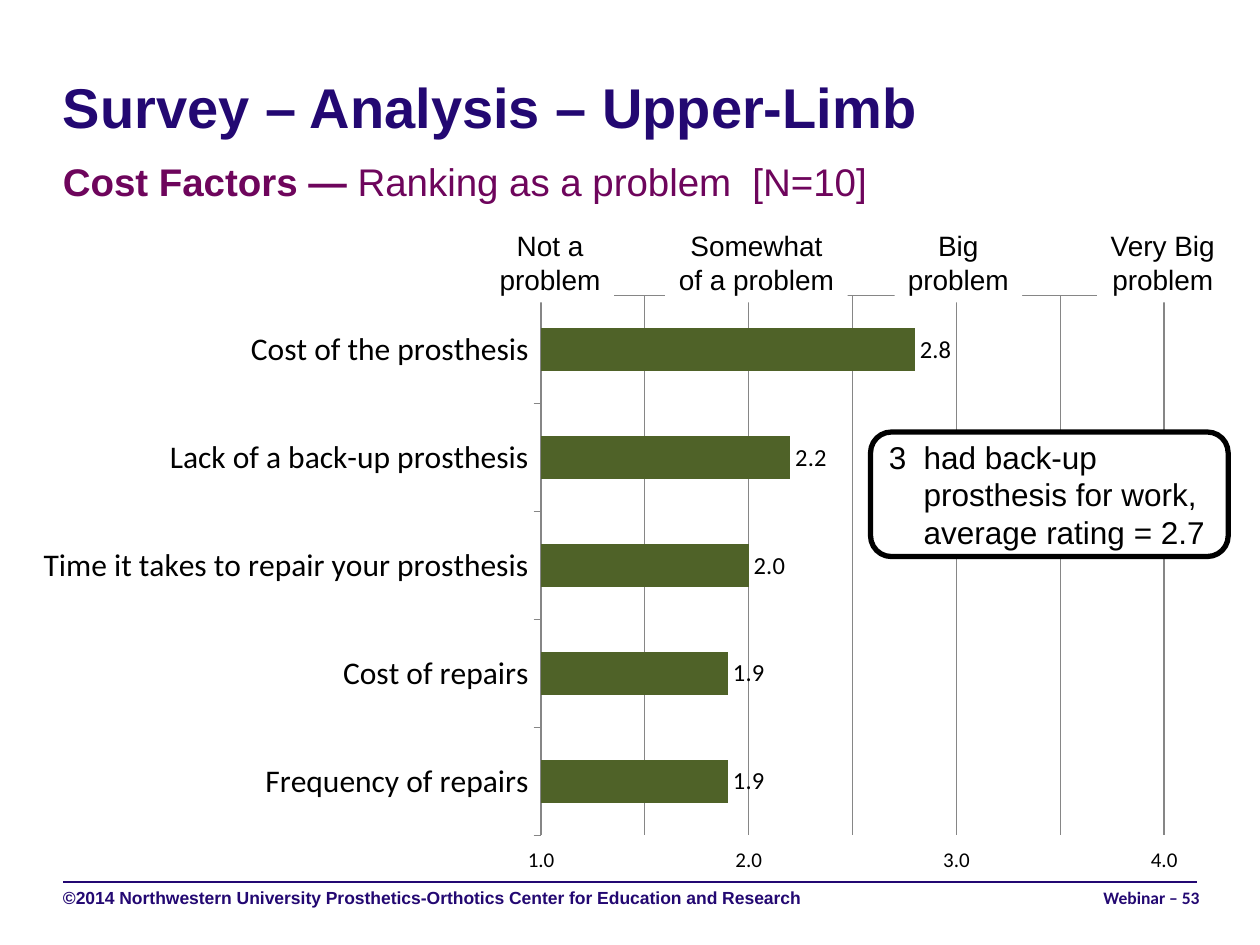
from copy import deepcopy

from lxml import etree
from pptx import Presentation, util as u
from pptx.chart.data import CategoryChartData
from pptx.dml.color import RGBColor
from pptx.enum import chart as charts, shapes, text
from pptx.oxml import parse_xml
from pptx.oxml.ns import nsdecls, qn

NAVY = RGBColor(0x23, 0x08, 0x72)
PLUM = RGBColor(0x6E, 0x05, 0x5C)
GREEN = RGBColor(0x4F, 0x62, 0x28)
GRAY = RGBColor(0x86, 0x86, 0x86)
BLACK = RGBColor(0, 0, 0)
WHITE = RGBColor(0xFF, 0xFF, 0xFF)
LEFT, CENTER, RIGHT = text.PP_ALIGN.LEFT, text.PP_ALIGN.CENTER, text.PP_ALIGN.RIGHT


class SlideBuilder:
    font = "Arial"
    chart_font = "Calibri"

    def __init__(self, page):
        self.page = page

    def style(self, font, size, color, bold=False, name=None):
        font.name = name or self.font
        font.size = u.Pt(size)
        font.color.rgb = color
        font.bold = bold

    def rule(self, x1, y1, x2, y2, color, width):
        line = self.page.shapes.add_connector(
            shapes.MSO_CONNECTOR.STRAIGHT, u.Cm(x1), u.Cm(y1), u.Cm(x2), u.Cm(y2))
        line.line.color.rgb = color
        line.line.width = u.Pt(width)
        etree.SubElement(line._element.spPr, qn("a:effectLst"))

    def text_box(self, area, spans, size, color, align=LEFT, top=0, name=None):
        """Spans are (wording, bold) pairs forming one paragraph."""
        frame = self.page.shapes.add_textbox(*map(u.Cm, area)).text_frame
        frame.word_wrap = True
        frame.margin_left = frame.margin_right = frame.margin_bottom = 0
        frame.margin_top = u.Cm(top)
        para = frame.paragraphs[0]
        para.alignment = align
        for wording, bold in spans:
            span = para.add_run()
            span.text = wording
            self.style(span.font, size, color, bold, name)

    def panel(self, kind, area, wording, size, align, border=None):
        box = self.page.shapes.add_shape(kind, *map(u.Cm, area))
        box.shadow.inherit = False
        box.fill.solid()
        box.fill.fore_color.rgb = WHITE
        if border:
            box.line.color.rgb = BLACK
            box.line.width = u.Pt(border)
        else:
            box.line.fill.background()
        frame = box.text_frame
        frame.text = wording
        frame.word_wrap = False
        frame.vertical_anchor = text.MSO_ANCHOR.MIDDLE
        for para in frame.paragraphs:
            para.alignment = align
            for span in para.runs:
                self.style(span.font, size, BLACK)
        return box

    def bar_chart(self, area, plot_area, ratings):
        data = CategoryChartData(number_format="0.0")
        data.categories = list(ratings)
        data.add_series("Series 1", list(ratings.values()))
        chart = self.page.shapes.add_chart(
            charts.XL_CHART_TYPE.BAR_CLUSTERED, *map(u.Cm, area), data).chart
        chart.has_title = chart.has_legend = False
        self.style(chart.font, 10, BLACK, name=self.chart_font)

        # Bars and value labels
        plot = chart.plots[0]
        plot.gap_width = 150
        plot.vary_by_categories = False
        series = plot.series[0]
        series.invert_if_negative = False
        series.format.fill.solid()
        series.format.fill.fore_color.rgb = GREEN
        labels = series.data_labels
        labels.show_value = True
        labels.number_format, labels.number_format_is_linked = "0.0", False
        labels.position = charts.XL_LABEL_POSITION.OUTSIDE_END
        self.style(labels.font, 14, BLACK, name=self.chart_font)

        # Axes, with the first category on top and the scale at the bottom
        names, scale = chart.category_axis, chart.value_axis
        names.reverse_order = True
        scale.minimum_scale, scale.maximum_scale = 1, 4
        scale.major_unit, scale.minor_unit = 1, 0.5
        scale.has_major_gridlines = scale.has_minor_gridlines = True
        scale.tick_label_position = charts.XL_TICK_LABEL_POSITION.HIGH
        scale.tick_labels.number_format = "0.0"
        scale.tick_labels.number_format_is_linked = False
        for axis, size in ((names, 18), (scale, 12)):
            axis.major_tick_mark = charts.XL_TICK_MARK.OUTSIDE
            axis.minor_tick_mark = charts.XL_TICK_MARK.NONE
            axis.format.line.color.rgb = GRAY
            self.style(axis.tick_labels.font, size, BLACK, name=self.chart_font)

        # Minor gridlines take a thinner version of the major style
        major = scale.major_gridlines.format.line
        major.color.rgb = GRAY
        major.width = u.Pt(0.5)
        axis_element = scale._element
        major_style = axis_element.find(qn("c:majorGridlines")).find(qn("c:spPr"))
        axis_element.find(qn("c:minorGridlines")).append(deepcopy(major_style))
        major.width = u.Pt(0.75)

        # Fixed plot area, as fractions of the chart
        values = "".join(f'<c:{key} val="{value}"/>' for key, value in zip("xywh", plot_area))
        layout = parse_xml(
            f'<c:layout {nsdecls("c")}><c:manualLayout><c:layoutTarget val="inner"/>'
            f'<c:xMode val="edge"/><c:yMode val="edge"/>{values}</c:manualLayout></c:layout>')
        plot_element = chart._chartSpace.chart.plotArea
        for old in plot_element.findall(qn("c:layout")):
            plot_element.remove(old)
        plot_element.insert(0, layout)


def main():
    deck = Presentation()
    deck.slide_width, deck.slide_height = u.Cm(25.4), u.Cm(19.05)
    slide = SlideBuilder(deck.slides.add_slide(deck.slide_layouts[6]))

    # Footer rule and chart
    slide.rule(1.27, 17.78, 24.13, 17.78, NAVY, 1)
    slide.bar_chart((0.48, 5.72, 23.7, 12.09), (0.44, 0.02, 0.53, 0.9), {
        "Cost of the prosthesis": 2.8,
        "Lack of a back-up prosthesis": 2.2,
        "Time it takes to repair your prosthesis": 2.0,
        "Cost of repairs": 1.9,
        "Frequency of repairs": 1.9,
    })

    # Headings
    slide.text_box((1.27, 1.47, 22.86, 1.37), [("Survey – Analysis – Upper-Limb", True)], 32, NAVY)
    slide.text_box((1.27, 3.18, 22.86, 1.27),
                   [("Cost Factors — ", True), ("Ranking as a problem  [N=10]", False)], 22, PLUM)

    # Scale names above the gridlines
    for center, width, wording in (
            (11.09, 2.57, "Not a\nproblem"), (15.25, 3.68, "Somewhat\nof a problem"),
            (19.32, 2.57, "Big\nproblem"), (23.44, 2.64, "Very Big\nproblem")):
        slide.panel(shapes.MSO_SHAPE.RECTANGLE, (center - width / 2, 4.47, width, 1.63),
                    wording, 16, CENTER)

    # Callout with a hanging indent
    callout = slide.panel(shapes.MSO_SHAPE.ROUNDED_RECTANGLE, (17.55, 8.71, 7.21, 2.51),
                          "3\thad back-up\nprosthesis for work,\naverage rating = 2.7",
                          18, LEFT, border=3)
    callout.text_frame.word_wrap = True
    callout.text_frame.margin_right = 0
    hang = u.Cm(0.7)
    for number, para in enumerate(callout.text_frame.paragraphs):
        properties = para._p.get_or_add_pPr()
        properties.set("marL", str(hang))
        properties.set("indent", str(0 if number else -hang))

    # Footer
    slide.text_box((1.27, 17.81, 16.94, 1.02), [(
        "©2014 Northwestern University Prosthetics-Orthotics Center for Education and Research",
        True)], 10, NAVY, top=0.08)
    slide.text_box((18.26, 17.81, 5.92, 1.02), [("Webinar – 53", True)], 10, NAVY,
                   align=RIGHT, top=0.08, name="Calibri")

    deck.save("out.pptx")


if __name__ == "__main__":
    main()
